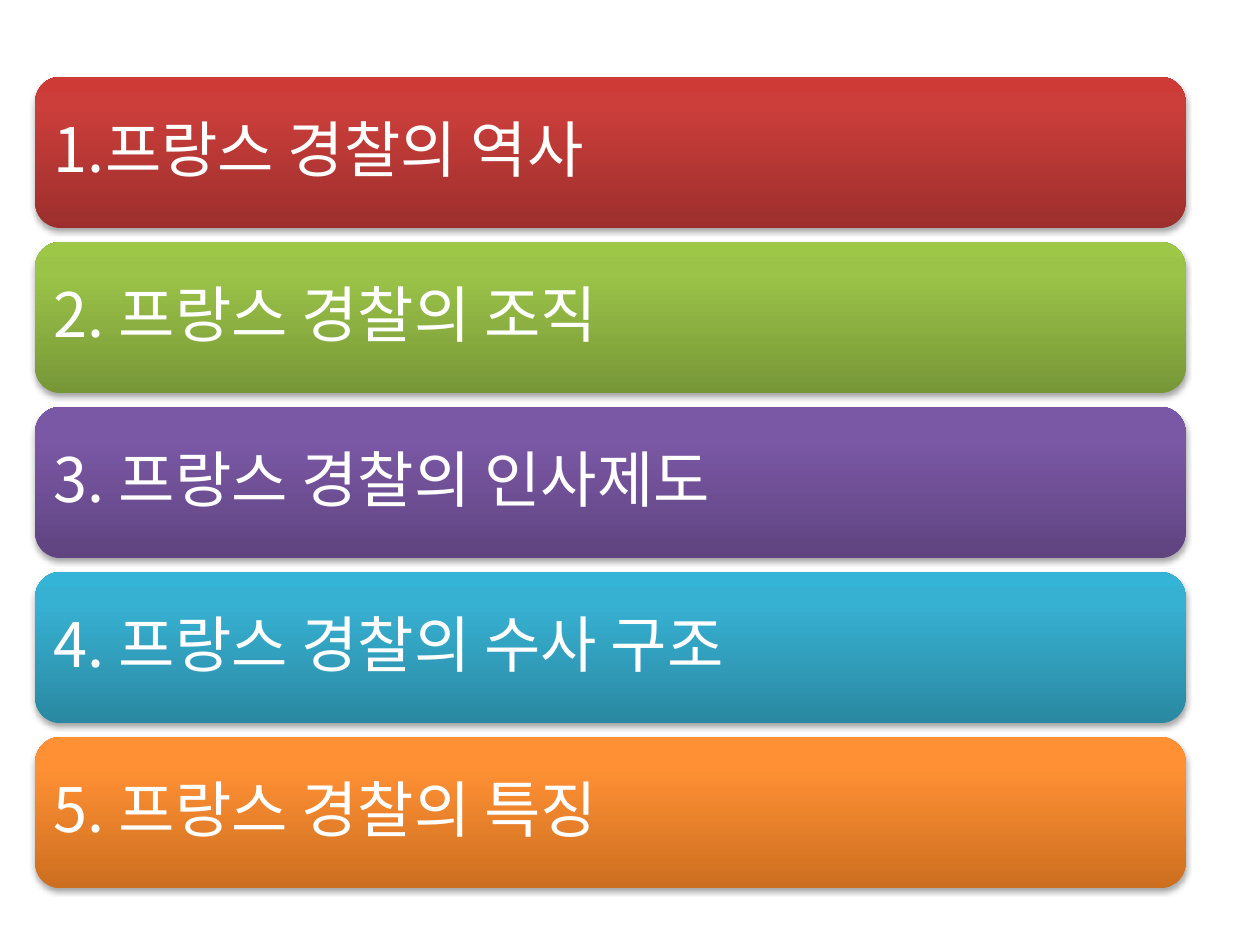
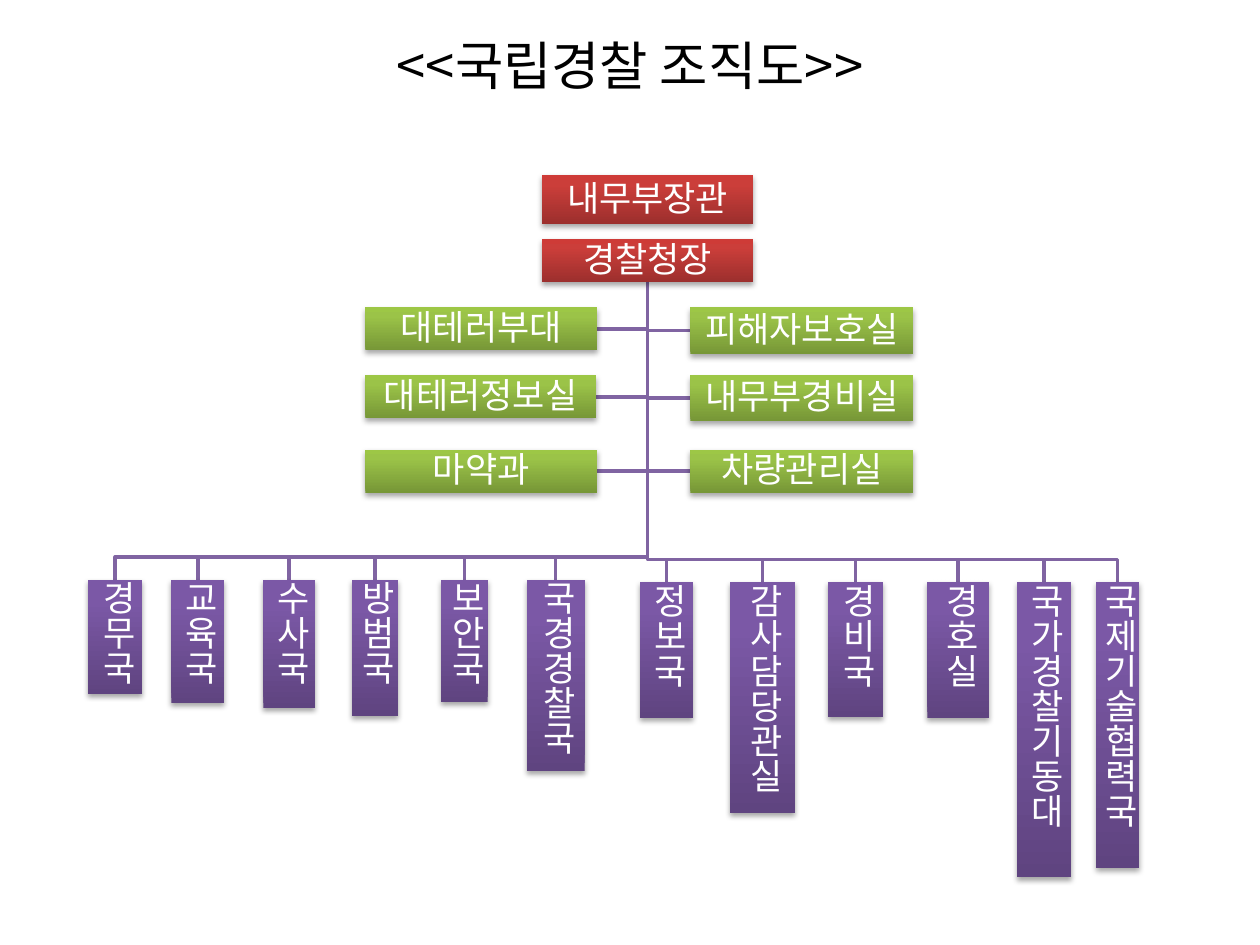
from copy import deepcopy
from dataclasses import dataclass

from pptx import Presentation
from pptx import util as u
from pptx.dml.color import RGBColor
from pptx.enum import shapes, text
from pptx.oxml import ns, parse_xml

FONT = "Noto Sans CJK KR"
WHITE = RGBColor(0xFF, 0xFF, 0xFF)
BLACK = RGBColor(0x00, 0x00, 0x00)
LINE = RGBColor(0x80, 0x64, 0xA2)
STOPS = (0, 0.8, 1)

RED = (RGBColor(0x9C, 0x2F, 0x2D), RGBColor(0xCB, 0x3E, 0x3A), RGBColor(0xCE, 0x3B, 0x37))
GREEN = (RGBColor(0x77, 0x97, 0x37), RGBColor(0x9B, 0xC3, 0x48), RGBColor(0x9D, 0xC7, 0x46))
PURPLE = (RGBColor(0x5F, 0x44, 0x80), RGBColor(0x7B, 0x58, 0xA6), RGBColor(0x7C, 0x57, 0xA8))
BLUE = (RGBColor(0x2A, 0x88, 0xA2), RGBColor(0x37, 0xB1, 0xD2), RGBColor(0x34, 0xB4, 0xD6))
ORANGE = (RGBColor(0xCC, 0x6E, 0x20), RGBColor(0xFF, 0x90, 0x34), RGBColor(0xFF, 0x91, 0x36))

SHADOW = (
    f'<a:outerShdw {ns.nsdecls("a")} blurRad="40000" dist="23000" dir="5400000" rotWithShape="0">'
    '<a:srgbClr val="000000"><a:alpha val="35000"/></a:srgbClr></a:outerShdw>'
)

TRUNK_X = 5.14
TRUNK_TOP = 2.24
BUS_GAP = 0.18


@dataclass
class Box:
    label: str
    left: float
    top: float
    width: float
    height: float
    palette: tuple

    @property
    def center(self) -> float:
        return self.left + self.width / 2

    @property
    def middle(self) -> float:
        return self.top + self.height / 2


CHAPTERS = [
    ("1.프랑스 경찰의 역사", RED),
    ("2. 프랑스 경찰의 조직", GREEN),
    ("3. 프랑스 경찰의 인사제도", PURPLE),
    ("4. 프랑스 경찰의 수사 구조", BLUE),
    ("5. 프랑스 경찰의 특징", ORANGE),
]

CHIEFS = [
    Box("내무부장관", 4.3, 1.39, 1.68, 0.39, RED),
    Box("경찰청장", 4.3, 1.9, 1.68, 0.34, RED),
]

OFFICES = [
    Box(label, left, top, width, height, GREEN)
    for label, left, top, width, height in [
        ("대테러부대", 2.9, 2.44, 1.84, 0.34),
        ("피해자보호실", 5.48, 2.44, 1.77, 0.37),
        ("대테러정보실", 2.9, 2.98, 1.83, 0.34),
        ("내무부경비실", 5.48, 2.98, 1.77, 0.36),
        ("마약과", 2.9, 3.57, 1.84, 0.34),
        ("차량관리실", 5.48, 3.57, 1.77, 0.34),
    ]
]

BUREAUS = [
    Box(label, left, 4.6 if left < TRUNK_X - 0.1 else 4.62, width, height, PURPLE)
    for label, left, width, height in [
        ("경무국", 0.7, 0.43, 0.91),
        ("교육국", 1.36, 0.42, 0.98),
        ("수사국", 2.09, 0.41, 1.02),
        ("방범국", 2.79, 0.37, 1.08),
        ("보안국", 3.5, 0.37, 0.97),
        ("국경경찰국", 4.18, 0.46, 1.52),
        ("정보국", 5.08, 0.42, 1.08),
        ("감사담당관실", 5.79, 0.52, 1.83),
        ("경비국", 6.57, 0.44, 1.07),
        ("경호실", 7.36, 0.49, 1.08),
        ("국가경찰기동대", 8.07, 0.43, 2.34),
        ("국제기술협력국", 8.7, 0.34, 2.27),
    ]
]


def style_text(frame, label: str, size: float, color: RGBColor, align) -> None:
    frame.text = label
    frame.word_wrap = True
    para = frame.paragraphs[0]
    para.alignment = align
    for span in para.runs:
        span.font.size = u.Pt(size)
        span.font.name = FONT
        span.font.color.rgb = color
        east_asian = parse_xml(f'<a:ea {ns.nsdecls("a")} typeface="{FONT}"/>')
        span.font._element.find(ns.qn("a:latin")).addnext(east_asian)


def fill_gradient(shape, palette: tuple) -> None:
    shape.fill.gradient()
    shape.fill.gradient_angle = 90
    stop_list = shape.element.spPr.find(".//" + ns.qn("a:gsLst"))
    stop_list.append(deepcopy(stop_list[-1]))
    for stop, position, color in zip(shape.fill.gradient_stops, STOPS, palette):
        stop.position = position
        stop.color.rgb = color


def draw_box(page, box: Box, kind, size: float, margin: float, align, vertical: bool = False):
    shape = page.shapes.add_shape(
        kind, u.Inches(box.left), u.Inches(box.top), u.Inches(box.width), u.Inches(box.height)
    )
    fill_gradient(shape, box.palette)
    shape.line.fill.background()
    shape.shadow.inherit = False
    shape.element.spPr.find(ns.qn("a:effectLst")).append(parse_xml(SHADOW))
    frame = shape.text_frame
    style_text(frame, box.label, size, WHITE, align)
    frame.paragraphs[0].line_spacing = 0.9
    frame.vertical_anchor = text.MSO_ANCHOR.MIDDLE
    frame.margin_left = frame.margin_right = u.Inches(margin)
    frame.margin_top = frame.margin_bottom = u.Inches(margin)
    if vertical:
        frame._txBody.bodyPr.set("vert", "eaVert")


def draw_branch(page, points: list[tuple[float, float]]) -> None:
    builder = page.shapes.build_freeform(u.Inches(TRUNK_X), u.Inches(TRUNK_TOP))
    builder.add_line_segments([(u.Inches(x), u.Inches(y)) for x, y in points], close=False)
    branch = builder.convert_to_shape()
    branch.fill.background()
    branch.line.color.rgb = LINE
    branch.line.width = u.Pt(2)
    branch.shadow.inherit = False


def build_contents(page) -> None:
    for index, (label, palette) in enumerate(CHAPTERS):
        box = Box(label, 0.28, 0.61 + 1.31 * index, 9.13, 1.2, palette)
        draw_box(page, box, shapes.MSO_SHAPE.ROUNDED_RECTANGLE, 35, 0.09, text.PP_ALIGN.LEFT)


def build_organization(page) -> None:
    for office in OFFICES:
        edge = office.left if office.left > TRUNK_X else office.left + office.width
        draw_branch(page, [(TRUNK_X, office.middle), (edge, office.middle)])
    for bureau in BUREAUS:
        bus = bureau.top - BUS_GAP
        draw_branch(page, [(TRUNK_X, bus), (bureau.center, bus), (bureau.center, bureau.top)])
    for box in CHIEFS + BUREAUS + OFFICES:
        draw_box(page, box, shapes.MSO_SHAPE.RECTANGLE, 20, 0.01,
                 text.PP_ALIGN.CENTER, vertical=box in BUREAUS)
    title = page.shapes.add_textbox(u.Inches(2.48), u.Inches(0.21), u.Inches(5.04), u.Inches(0.61))
    style_text(title.text_frame, "<<국립경찰 조직도>>", 30, BLACK, text.PP_ALIGN.CENTER)


def main() -> None:
    deck = Presentation()
    deck.slide_width = u.Inches(10)
    deck.slide_height = u.Inches(7.5)
    for build in (build_contents, build_organization):
        build(deck.slides.add_slide(deck.slide_layouts[6]))
    deck.save("out.pptx")


if __name__ == "__main__":
    main()
